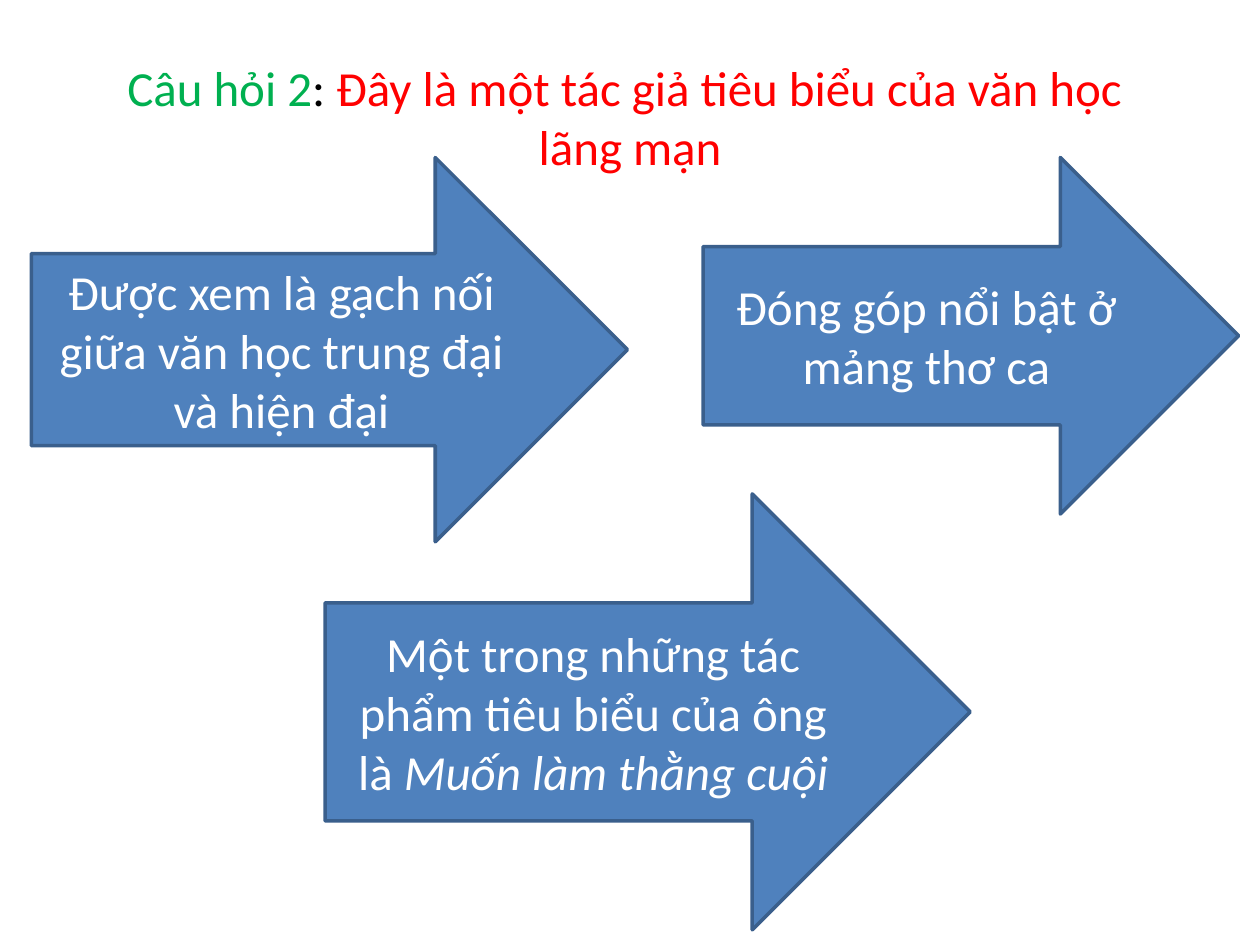
from pptx import Presentation
from pptx.dml.color import RGBColor
from pptx.enum.shapes import MSO_SHAPE as Shape
from pptx.enum.text import MSO_ANCHOR as Anchor, PP_ALIGN as Align
from pptx.util import Inches, Pt

COLORS = {
    "green": "00B050",
    "black": "000000",
    "red": "FF0000",
    "white": "FFFFFF",
    "blue": "4F81BD",
    "outline": "3A5F8C",
}


def rgb(name):
    return RGBColor.from_string(COLORS[name])


def add_run(p, text, color="white", size=28, font="Calibri", italic=False):
    r = p.add_run()
    r.text = text
    r.font.name = font
    r.font.size = Pt(size)
    r.font.italic = italic
    r.font.color.rgb = rgb(color)


class SlideBuilder:
    line_width = Pt(2)

    def __init__(self, prs):
        self.s = prs.slides.add_slide(prs.slide_layouts[6])

    def centered(self, sp):
        tf = sp.text_frame
        tf.word_wrap = True
        tf.vertical_anchor = Anchor.MIDDLE
        p = tf.paragraphs[0]
        p.alignment = Align.CENTER
        return p

    def title(self, box):
        sp = self.s.shapes.add_textbox(*map(Inches, box))
        p = self.centered(sp)
        add_run(p, "Câu hỏi 2", color="green")
        add_run(p, ": ", color="black")
        add_run(p, "Đây là một tác giả tiêu biểu của văn học ", color="red")
        p.add_line_break()
        add_run(p, "lãng mạn", color="red")

    def arrow(self, box, text, work=""):
        sp = self.s.shapes.add_shape(Shape.RIGHT_ARROW, *map(Inches, box))
        sp.shadow.inherit = False
        sp.fill.solid()
        sp.fill.fore_color.rgb = rgb("blue")
        sp.line.color.rgb = rgb("outline")
        sp.line.width = self.line_width
        p = self.centered(sp)
        add_run(p, text)
        if work:
            add_run(p, work, italic=True)


def main():
    prs = Presentation()
    prs.slide_width, prs.slide_height = Inches(10), Inches(7.5)
    slide = SlideBuilder(prs)
    slide.title((0.5, 0.3, 9, 1.25))
    slide.arrow((0.25, 1.25, 4.73, 3.05),
                "Được xem là gạch nối giữa văn học trung đại và hiện đại")
    slide.arrow((2.58, 3.92, 5.12, 3.46),
                "Một trong những tác phẩm tiêu biểu của ông là ",
                work="Muốn làm thằng cuội")
    slide.arrow((5.58, 1.25, 4.25, 2.83), "Đóng góp nổi bật ở mảng thơ ca")
    prs.save("out.pptx")


if __name__ == "__main__":
    main()
